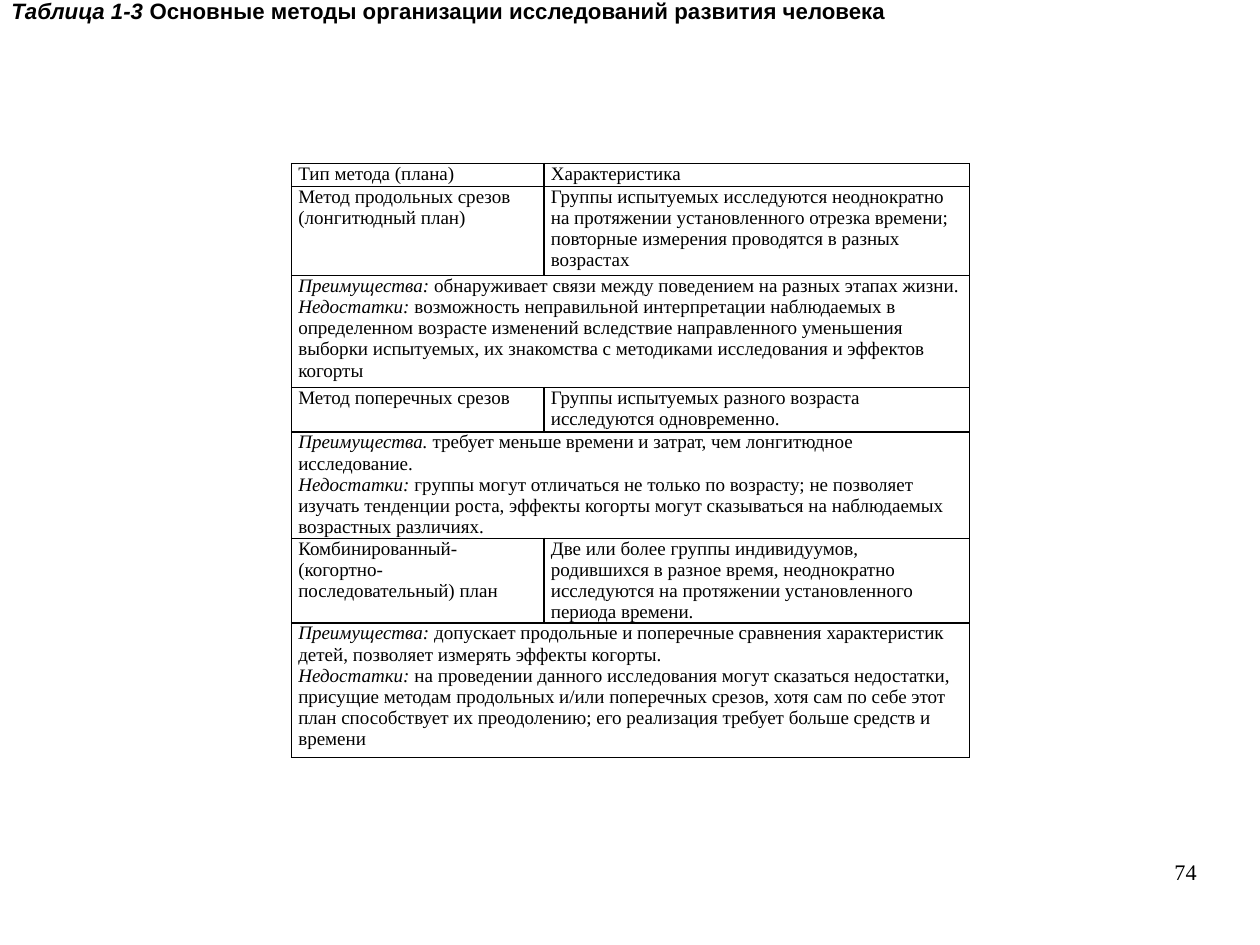
from dataclasses import dataclass

from lxml import etree
from pptx import Presentation
from pptx.dml.color import RGBColor
from pptx.enum.text import MSO_ANCHOR, MSO_AUTO_SIZE, PP_ALIGN
from pptx.oxml.ns import qn
from pptx.util import Cm, Inches, Pt

LEFT, RIGHT = PP_ALIGN.LEFT, PP_ALIGN.RIGHT
TOP = MSO_ANCHOR.TOP
NO_AUTOSIZE = MSO_AUTO_SIZE.NONE
TITLE_ONLY = 5

# Content: a row holds cells, a cell holds paragraphs of (italic lead, plain text)
TITLE = ("Таблица 1-3 ", "Основные методы организации исследований развития человека")
PAGE_NUMBER = "74"
ROWS = [
    [[("", "Тип метода (плана)")],
     [("", "Характеристика")]],
    [[("", "Метод продольных срезов (лонгитюдный план)")],
     [("", "Группы испытуемых исследуются неоднократно на протяжении "
           "установленного отрезка времени; повторные измерения проводятся "
           "в разных возрастах")]],
    [[("Преимущества:", " обнаруживает связи между поведением на разных этапах жизни."),
      ("Недостатки:", " возможность неправильной интерпретации наблюдаемых в "
       "определенном возрасте изменений вследствие направленного уменьшения "
       "выборки испытуемых, их знакомства с методиками исследования и эффектов "
       "когорты")]],
    [[("", "Метод поперечных срезов")],
     [("", "Группы испытуемых разного возраста исследуются одновременно.")]],
    [[("Преимущества.", " требует меньше времени и затрат, чем лонгитюдное исследование."),
      ("Недостатки:", " группы могут отличаться не только по возрасту; не позволяет "
       "изучать тенденции роста, эффекты когорты могут сказываться на наблюдаемых "
       "возрастных различиях.")]],
    [[("", "Комбинированный-(когортно-последовательный) план")],
     [("", "Две или более группы индивидуумов, родившихся в разное время, "
           "неоднократно исследуются на протяжении установленного периода времени.")]],
    [[("Преимущества:", " допускает продольные и поперечные сравнения характеристик "
       "детей, позволяет измерять эффекты когорты."),
      ("Недостатки: ", "на проведении данного исследования могут сказаться недостатки, "
       "присущие методам продольных и/или поперечных срезов, хотя сам по себе этот "
       "план способствует их преодолению; его реализация требует больше средств и "
       "времени")]],
]

# Layout: page in centimetres, the rest in inches
PAGE_WIDTH, PAGE_HEIGHT = Cm(28), Cm(21)
TABLE_LEFT, TABLE_TOP = 2.55, 1.43
COLUMN_WIDTHS = [2.21, 3.72]
ROW_HEIGHTS = [0.2, 0.78, 0.98, 0.39, 0.93, 0.74, 1.18]
CELL_MARGINS = (0.06, 0.07)
TITLE_MARGINS = (0.1, 0.1)


@dataclass(frozen=True)
class Theme:
    ink: RGBColor = RGBColor(0, 0, 0)
    heading_font: str = "Arial"
    body_font: str = "Times New Roman"
    large: int = 14
    body: int = 12
    border: int = 1
    title_spacing: float = 0.93
    cell_spacing: float = 1.0
    number_spacing: float = 0.95


THEME = Theme()


def set_font(para, name, size):
    para.font.name = name
    para.font.size = Pt(size)
    para.font.color.rgb = THEME.ink


def add_spans(para, lead, text):
    if lead:
        span = para.add_run()
        span.text = lead
        span.font.italic = True
    para.add_run().text = text


def set_margins(frame, left=0, right=0):
    frame.margin_left, frame.margin_right = Inches(left), Inches(right)
    frame.margin_top = frame.margin_bottom = 0


def draw_borders(cell):
    properties = cell._tc.get_or_add_tcPr()
    for side in ("a:lnL", "a:lnR", "a:lnT", "a:lnB"):
        line = etree.SubElement(properties, qn(side), w=str(Pt(THEME.border)))
        fill = etree.SubElement(line, qn("a:solidFill"))
        etree.SubElement(fill, qn("a:srgbClr"), val=str(THEME.ink))


def fill_cell(cell, paragraphs):
    set_margins(cell, *CELL_MARGINS)
    frame = cell.text_frame
    for index, (lead, text) in enumerate(paragraphs):
        para = frame.paragraphs[0] if index == 0 else frame.add_paragraph()
        para.line_spacing = THEME.cell_spacing
        set_font(para, THEME.body_font, THEME.body)
        add_spans(para, lead, text)


def add_title(page):
    title = page.shapes.title
    title.left, title.top = 0, 0
    title.width, title.height = PAGE_WIDTH, Inches(0.5)
    frame = title.text_frame
    frame.auto_size = NO_AUTOSIZE
    frame.vertical_anchor = TOP
    frame.word_wrap = True
    set_margins(frame, *TITLE_MARGINS)
    para = frame.paragraphs[0]
    para.alignment = LEFT
    para.line_spacing = THEME.title_spacing
    set_font(para, THEME.heading_font, THEME.large)
    para.font.bold = True
    add_spans(para, *TITLE)


def add_methods_table(page):
    table = page.shapes.add_table(
        len(ROWS), len(COLUMN_WIDTHS), Inches(TABLE_LEFT), Inches(TABLE_TOP),
        Inches(sum(COLUMN_WIDTHS)), Inches(sum(ROW_HEIGHTS))).table
    table.first_row = table.horz_banding = False
    for column, width in zip(table.columns, COLUMN_WIDTHS):
        column.width = Inches(width)
    for row, height in zip(table.rows, ROW_HEIGHTS):
        row.height = Inches(height)
    for cell in table.iter_cells():
        draw_borders(cell)
        cell.fill.background()
    for row_index, contents in enumerate(ROWS):
        if len(contents) == 1:
            table.cell(row_index, 0).merge(table.cell(row_index, 1))
        for column_index, paragraphs in enumerate(contents):
            fill_cell(table.cell(row_index, column_index), paragraphs)


def add_page_number(page):
    box = page.shapes.add_textbox(Inches(7.9), Inches(7.53), Inches(2.57), Inches(0.57))
    frame = box.text_frame
    frame.word_wrap = True
    set_margins(frame)
    para = frame.paragraphs[0]
    para.alignment = RIGHT
    para.line_spacing = THEME.number_spacing
    set_font(para, THEME.body_font, THEME.large)
    add_spans(para, "", PAGE_NUMBER)


def main():
    deck = Presentation()
    deck.slide_width, deck.slide_height = PAGE_WIDTH, PAGE_HEIGHT
    page = deck.slides.add_slide(deck.slide_layouts[TITLE_ONLY])
    add_methods_table(page)
    add_title(page)
    add_page_number(page)
    deck.save("out.pptx")


if __name__ == "__main__":
    main()
